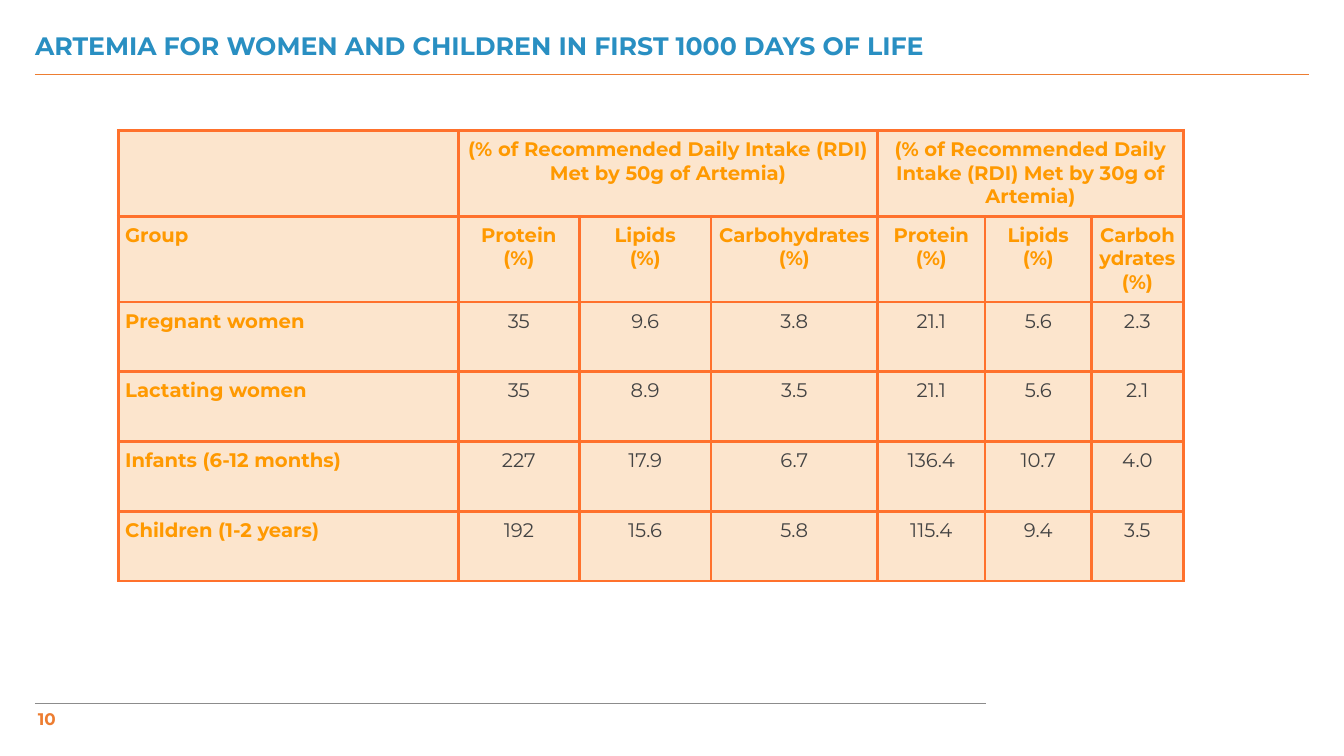
from dataclasses import dataclass
from lxml import etree
from pptx import Presentation
from pptx.dml.color import RGBColor
from pptx.enum import shapes, text
from pptx.oxml import ns
from pptx.util import Pt


@dataclass(frozen=True)
class Theme:
    font: str = "Montserrat"
    title: str = "298FC2"
    accent: str = "ED7D31"
    footer_rule: str = "8C8C8C"
    border: str = "FF712C"
    cell: str = "FCE5CD"
    heading: str = "FF9900"
    value: str = "434343"
    title_size: int = 18
    table_size: int = 14
    page_size: int = 12


theme = Theme()


def style(paragraph, size, color, bold=True, align=text.PP_ALIGN.LEFT):
    paragraph.alignment = align
    paragraph.font.name = theme.font
    paragraph.font.size = Pt(size)
    paragraph.font.bold = bold
    paragraph.font.color.rgb = RGBColor.from_string(color)


def add_border(cell, side):
    line = etree.SubElement(cell._tc.get_or_add_tcPr(), ns.qn(f"a:{side}"), w=str(Pt(2.25)))
    fill = etree.SubElement(line, ns.qn("a:solidFill"))
    etree.SubElement(fill, ns.qn("a:srgbClr"), val=theme.border)


deck = Presentation()
deck.slide_width, deck.slide_height = Pt(960), Pt(540)
slide = deck.slides.add_slide(deck.slide_layouts[5])

title = slide.shapes.title
title.left, title.top, title.width, title.height = Pt(25), Pt(24), Pt(880), Pt(29.5)
heading = title.text_frame
heading.text = "ARTEMIA FOR WOMEN AND CHILDREN IN FIRST 1000 DAYS OF LIFE"
heading.margin_left = heading.margin_top = heading.margin_right = heading.margin_bottom = 0
heading.vertical_anchor = text.MSO_ANCHOR.TOP
heading.auto_size = text.MSO_AUTO_SIZE.NONE
heading.word_wrap = True
heading.paragraphs[0].line_spacing = 0.9
style(heading.paragraphs[0], theme.title_size, theme.title)

for y, right, color in ((53.3, 935, theme.accent), (502.5, 704.2, theme.footer_rule)):
    rule = slide.shapes.add_connector(shapes.MSO_CONNECTOR.STRAIGHT, Pt(25), Pt(y), Pt(right), Pt(y))
    rule.line.color.rgb = RGBColor.from_string(color)
    rule.line.width = Pt(0.75)
    etree.SubElement(rule._element.spPr, ns.qn("a:effectLst"))

page_number = slide.shapes.add_textbox(Pt(20), Pt(505.5), Pt(49), Pt(16.6)).text_frame
page_number.text = "10"
page_number.word_wrap = True
page_number.vertical_anchor = text.MSO_ANCHOR.MIDDLE
style(page_number.paragraphs[0], theme.page_size, theme.accent)

intake_rows = [
    ["", "(% of Recommended Daily Intake (RDI) Met by 50g of Artemia)", "", "",
     "(% of Recommended Daily Intake (RDI) Met by 30g of Artemia)", "", ""],
    ["Group", "Protein (%)", "Lipids\n(%)", "Carbohydrates\n(%)",
     "Protein\n(%)", "Lipids\n(%)", "Carbohydrates\n(%)"],
    ["Pregnant women", "35", "9.6", "3.8", "21.1", "5.6", "2.3"],
    ["Lactating women", "35", "8.9", "3.5", "21.1", "5.6", "2.1"],
    ["Infants (6-12 months)", "227", "17.9", "6.7", "136.4", "10.7", "4.0"],
    ["Children (1-2 years)", "192", "15.6", "5.8", "115.4", "9.4", "3.5"],
]
column_widths = [243, 86.5, 94, 119, 76.8, 76, 65.6]
row_heights = [61.4] * 2 + [49.8] * 4

intake = slide.shapes.add_table(
    len(row_heights), len(column_widths), Pt(84.4), Pt(93),
    Pt(sum(column_widths)), Pt(sum(row_heights))).table
intake.first_row = intake.horz_banding = False
for column, width in zip(intake.columns, column_widths):
    column.width = Pt(width)
for row, height in zip(intake.rows, row_heights):
    row.height = Pt(height)
for first in (1, 4):
    intake.cell(0, first).merge(intake.cell(0, first + 2))

for r, entries in enumerate(intake_rows):
    for c, entry in enumerate(entries):
        cell = intake.cell(r, c)
        for side in ("lnL", "lnR", "lnT", "lnB"):
            add_border(cell, side)
        cell.fill.solid()
        cell.fill.fore_color.rgb = RGBColor.from_string(theme.cell)
        cell.margin_left = cell.margin_right = cell.margin_top = cell.margin_bottom = Pt(5)
        cell.text = entry
        is_label = r < 2 or c == 0
        for paragraph in cell.text_frame.paragraphs:
            style(paragraph, theme.table_size, theme.heading if is_label else theme.value,
                  is_label, text.PP_ALIGN.CENTER if c else text.PP_ALIGN.LEFT)

deck.save("out.pptx")
